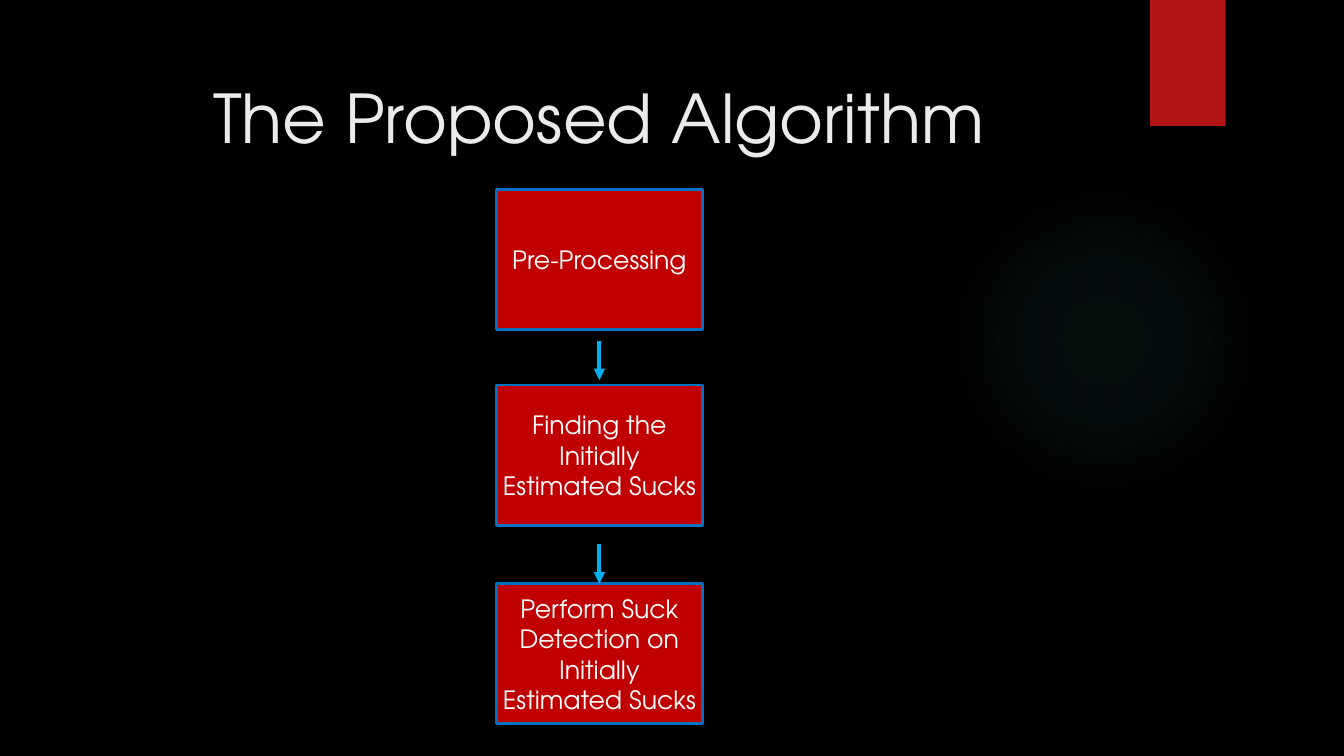
from pptx import Presentation
from pptx.dml.color import RGBColor
from pptx.enum.shapes import MSO_CONNECTOR, MSO_SHAPE
from pptx.enum.text import MSO_ANCHOR, MSO_AUTO_SIZE, PP_ALIGN
from pptx.oxml import parse_xml
from pptx.oxml.ns import qn
from pptx.util import Pt
from lxml import etree

FONT = "TeX Gyre Adventor"
COLORS = {
    "background": "000000", "title": "EBEBEB", "ribbon": "B01513",
    "glow": "50B9C1", "step": "C00000", "step_line": "0070C0",
    "step_text": "FFFFFF", "arrow": "00B0F0", "shadow": "000000",
}
NAMESPACE = "http://schemas.openxmlformats.org/drawingml/2006/main"
STEPS = [
    (0, "Pre-Processing"),
    (139.6, "Finding the Initially Estimated Sucks"),
    (281.5, "Perform Suck Detection on Initially Estimated Sucks"),
]
STEP_HEIGHT = 100.2
ARROW_OFFSETS = [108, 253.4]
ARROW_LENGTH = 28.1


def color(name):
    return RGBColor.from_string(COLORS[name])


def write(frame, text, size, ink, anchor):
    frame.word_wrap = True
    frame.auto_size = MSO_AUTO_SIZE.NONE
    frame.vertical_anchor = anchor
    paragraph = frame.paragraphs[0]
    paragraph.text = text
    paragraph.alignment = PP_ALIGN.CENTER
    font = paragraph.runs[0].font
    font.name, font.size, font.color.rgb = FONT, Pt(size), color(ink)


def add_filled(slide, kind, box, fill=None):
    shape = slide.shapes.add_shape(kind, *map(Pt, box))
    shape.shadow.inherit = False
    shape.line.fill.background()
    if fill:
        shape.fill.solid()
        shape.fill.fore_color.rgb = color(fill)
    return shape


def drop_shadow(shape, opacity, distance):
    effects = shape.element.spPr.find(qn("a:effectLst"))
    effects.append(parse_xml(
        f'<a:outerShdw xmlns:a="{NAMESPACE}" blurRad="{Pt(3)}" dist="{Pt(distance)}" '
        f'dir="5400000" rotWithShape="0"><a:srgbClr val="{COLORS["shadow"]}">'
        f'<a:alpha val="{opacity * 1000}"/></a:srgbClr></a:outerShdw>'))


def add_glow(slide, box):
    """Add a faint circle that fades out towards its edge."""
    glow = add_filled(slide, MSO_SHAPE.OVAL, box)
    glow.fill.background()
    stops = "".join(
        f'<a:gs pos="{position * 1000}"><a:srgbClr val="{COLORS["glow"]}">'
        f'<a:alpha val="{opacity * 1000}"/></a:srgbClr></a:gs>'
        for position, opacity in [(0, 7), (36, 6), (69, 0)])
    gradient = parse_xml(
        f'<a:gradFill xmlns:a="{NAMESPACE}" rotWithShape="1"><a:gsLst>{stops}</a:gsLst>'
        '<a:path path="circle"><a:fillToRect l="50000" t="50000" r="50000" b="50000"/>'
        '</a:path></a:gradFill>')
    properties = glow.element.spPr
    properties.replace(properties.find(qn("a:noFill")), gradient)


def add_backdrop(slide):
    slide.background.fill.solid()
    slide.background.fill.fore_color.rgb = color("background")
    add_glow(slide, (677.5, 131.8, 221.8, 221.8))
    ribbon = add_filled(slide, MSO_SHAPE.RECTANGLE, (821.5, 0, 54, 90), "ribbon")
    drop_shadow(ribbon, 45, 2)


def add_title(slide, text, box):
    title = slide.shapes.title
    title.left, title.top, title.width, title.height = map(Pt, box)
    write(title.text_frame, text, 48, "title", MSO_ANCHOR.BOTTOM)


def add_step(slide, text, box):
    step = add_filled(slide, MSO_SHAPE.RECTANGLE, box, "step")
    step.line.color.rgb = color("step_line")
    step.line.width = Pt(2)
    drop_shadow(step, 35, 1.8)
    frame = step.text_frame
    frame.margin_left = frame.margin_right = Pt(3.6)
    frame.margin_top = frame.margin_bottom = Pt(3.6)
    write(frame, text, 18, "step_text", MSO_ANCHOR.MIDDLE)


def add_arrow(slide, x, top):
    arrow = slide.shapes.add_connector(
        MSO_CONNECTOR.STRAIGHT, Pt(x), Pt(top), Pt(x), Pt(top + ARROW_LENGTH))
    arrow.line.color.rgb = color("arrow")
    arrow.line.width = Pt(2.75)
    etree.SubElement(arrow.line._get_or_add_ln(), qn("a:tailEnd"), type="triangle")
    etree.SubElement(arrow._element.spPr, qn("a:effectLst"))


def add_flow(slide, left, top, width):
    for offset, text in STEPS:
        add_step(slide, text, (left, top + offset, width, STEP_HEIGHT))
    for offset in ARROW_OFFSETS:
        add_arrow(slide, left + width / 2, top + offset)


def main():
    presentation = Presentation()
    presentation.slide_width, presentation.slide_height = Pt(960), Pt(540)
    slide = presentation.slides.add_slide(presentation.slide_layouts[5])
    add_backdrop(slide)
    add_title(slide, "The Proposed Algorithm", (121.7, 0, 612, 116))
    add_flow(slide, 354.7, 135.4, 146.9)
    presentation.save("out.pptx")


if __name__ == "__main__":
    main()
